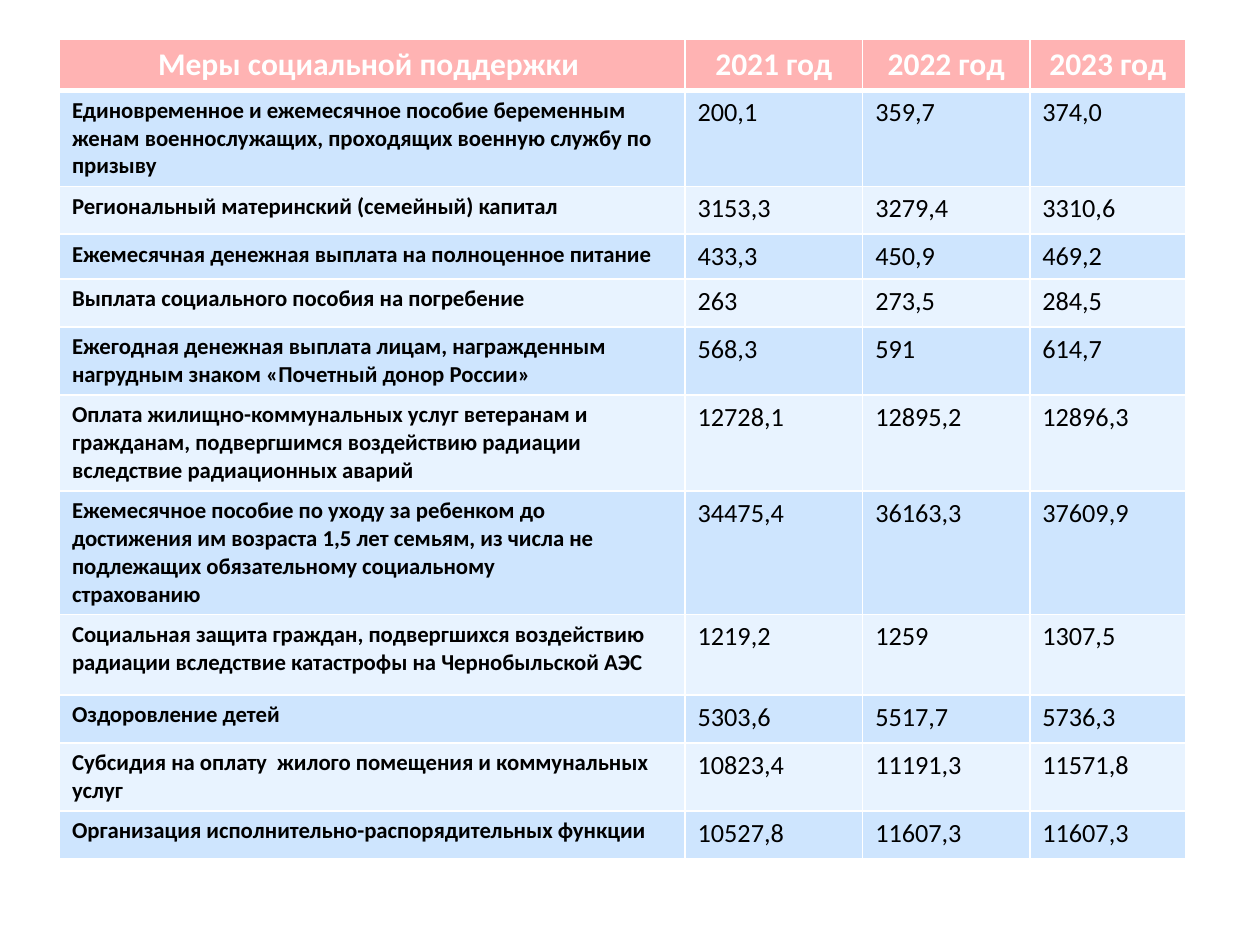
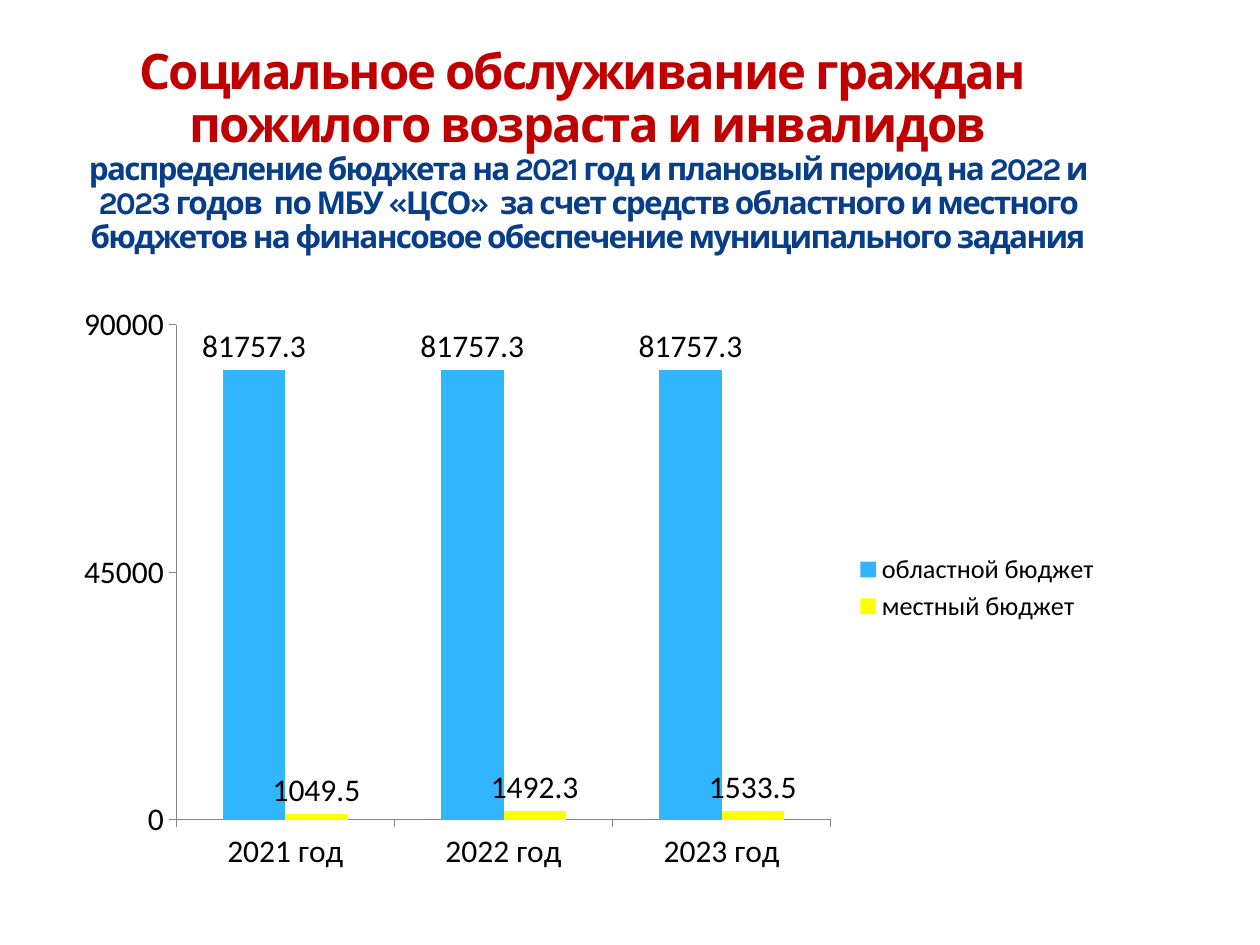
from pptx import Presentation
from pptx.chart.data import CategoryChartData
from pptx.dml.color import RGBColor
from pptx.enum.chart import XL_CHART_TYPE, XL_LABEL_POSITION, XL_LEGEND_POSITION, XL_TICK_MARK
from pptx.enum.text import MSO_ANCHOR, PP_ALIGN
from pptx.oxml import parse_xml
from pptx.oxml.ns import nsdecls
from pptx.util import Pt

WHITE, BLACK, GREY = "FFFFFF", "000000", "868686"
HEADER_PINK, BAND_DARK, BAND_LIGHT = "FFB3B3", "CEE5FE", "E8F3FF"
TITLE_RED, SUBTITLE_BLUE = "C00000", "073E87"
BODY_FONT, TITLE_FONT = "Calibri", "Karla"
YEARS = ["2021 год", "2022 год", "2023 год"]


def color(value):
    return RGBColor.from_string(value)


def add_span(para, text, font, size, fill, bold):
    span = para.add_run()
    span.text = text
    span.font.name = font
    span.font.size = Pt(size)
    span.font.bold = bold
    span.font.color.rgb = color(fill)
    return span


deck = Presentation()
deck.slide_width, deck.slide_height = Pt(720), Pt(540)
blank = deck.slide_layouts[6]

# Slide 1: table of support measures; a line break in a name starts a new paragraph
page = deck.slides.add_slide(blank)
measures = [
    ("Меры социальной поддержки ", *YEARS),
    ("Единовременное и ежемесячное пособие беременным женам военнослужащих, "
     "проходящих военную службу по\nпризыву", "200,1", "359,7", "374,0"),
    ("Региональный материнский (семейный) капитал", "3153,3", "3279,4", "3310,6"),
    ("Ежемесячная денежная выплата на полноценное питание", "433,3", "450,9", "469,2"),
    ("Выплата социального пособия на погребение", "263", "273,5", "284,5"),
    ("Ежегодная денежная выплата лицам, награжденным нагрудным знаком "
     "«Почетный донор России»", "568,3", "591", "614,7"),
    ("Оплата жилищно-коммунальных услуг ветеранам и гражданам, подвергшимся "
     "воздействию радиации вследствие радиационных аварий", "12728,1", "12895,2", "12896,3"),
    ("Ежемесячное пособие по уходу за ребенком до\n"
     "достижения им возраста 1,5 лет семьям, из числа не\n"
     "подлежащих обязательному социальному\nстрахованию", "34475,4", "36163,3", "37609,9"),
    ("Социальная защита граждан, подвергшихся воздействию радиации вследствие "
     "катастрофы на Чернобыльской АЭС", "1219,2", "1259", "1307,5"),
    ("Оздоровление детей", "5303,6", "5517,7", "5736,3"),
    ("Субсидия на оплату  жилого помещения и коммунальных услуг",
     "10823,4", "11191,3", "11571,8"),
    ("Организация исполнительно-распорядительных функции",
     "10527,8", "11607,3", "11607,3"),
]
column_widths = [357.5, 101.5, 95.5, 89.25]
row_heights = [29, 54, 27.4, 24, 27.4, 38.5, 54, 70, 46, 27.4, 38.5, 27.4]

table = page.shapes.add_table(len(measures), len(column_widths), Pt(34), Pt(22.5),
                              Pt(sum(column_widths)), Pt(sum(row_heights))).table
for column, width in zip(table.columns, column_widths):
    column.width = Pt(width)
for row, height in zip(table.rows, row_heights):
    row.height = Pt(height)

for row_index, texts in enumerate(measures):
    is_header = row_index == 0
    band = HEADER_PINK if is_header else BAND_DARK if row_index % 2 else BAND_LIGHT
    for column_index, text in enumerate(texts):
        cell = table.cell(row_index, column_index)
        for side in "LRTB":
            thick = is_header and side == "B" or row_index == 1 and side == "T"
            cell._tc.get_or_add_tcPr().append(parse_xml(
                f'<a:ln{side} {nsdecls("a")} w="{Pt(3 if thick else 1)}"><a:solidFill>'
                f'<a:srgbClr val="{WHITE}"/></a:solidFill></a:ln{side}>'))
        cell.fill.solid()
        cell.fill.fore_color.rgb = color(band)
        is_name = column_index == 0
        size = 18 if is_header else 13 if is_name else 15
        for line_index, line in enumerate(text.split("\n")):
            frame = cell.text_frame
            para = frame.add_paragraph() if line_index else frame.paragraphs[0]
            para.alignment = PP_ALIGN.CENTER if is_header else PP_ALIGN.LEFT
            add_span(para, line, BODY_FONT, size, WHITE if is_header else BLACK,
                     is_header or is_name)

# Slide 2: title
page = deck.slides.add_slide(blank)
box = page.shapes.add_textbox(Pt(36), Pt(21.6), Pt(600), Pt(130))
frame = box.text_frame
frame.word_wrap = True
frame.vertical_anchor = MSO_ANCHOR.MIDDLE
para = frame.paragraphs[0]
para.alignment = PP_ALIGN.CENTER
para.line_spacing = 0.9
title_lines = [
    ("Социальное обслуживание граждан ", 28, TITLE_RED),
    ("пожилого возраста и инвалидов", 28, TITLE_RED),
    ("распределение бюджета на 2021 год и плановый период на 2022 и 2023 годов  по МБУ «ЦСО»  "
     "за счет средств областного и местного бюджетов на финансовое обеспечение "
     "муниципального задания", 18, SUBTITLE_BLUE),
]
for line_index, (text, size, fill) in enumerate(title_lines):
    if line_index:
        para.add_line_break()
    span = add_span(para, text, TITLE_FONT, size, fill, True)
    span._r.get_or_add_rPr().set("spc", "-100")

# Slide 2: budget chart
budgets = [
    ("областной бюджет", [81757.3, 81757.3, 81757.3], "31B6FD"),
    ("местный бюджет", [1049.5, 1492.3, 1533.5], "FFFF00"),
]
data = CategoryChartData()
data.categories = YEARS
for name, values, fill in budgets:
    data.add_series(name, values)
chart = page.shapes.add_chart(XL_CHART_TYPE.COLUMN_CLUSTERED, Pt(36), Pt(168),
                              Pt(600), Pt(336), data).chart
chart.has_title = False
chart.font.name = BODY_FONT
chart.font.size = Pt(18)
chart.font.color.rgb = color(BLACK)

chart.has_legend = True
chart.legend.position = XL_LEGEND_POSITION.RIGHT
chart.legend.include_in_layout = False
chart.legend.font.name = BODY_FONT
chart.legend.font.size = Pt(15)
chart.legend.font.color.rgb = color(BLACK)

for axis in (chart.category_axis, chart.value_axis):
    axis.has_major_gridlines = False
    axis.major_tick_mark = XL_TICK_MARK.OUTSIDE
    axis.minor_tick_mark = XL_TICK_MARK.NONE
    axis.format.line.color.rgb = color(GREY)
chart.value_axis.minimum_scale = 0
chart.value_axis.maximum_scale = 90000
chart.value_axis.major_unit = 45000

plot = chart.plots[0]
plot.gap_width = 150
plot.overlap = 0
plot.vary_by_categories = False
for series, (name, values, fill) in zip(plot.series, budgets):
    series.format.fill.solid()
    series.format.fill.fore_color.rgb = color(fill)
    series.data_labels.show_value = True
    series.data_labels.position = XL_LABEL_POSITION.OUTSIDE_END

deck.save("out.pptx")
